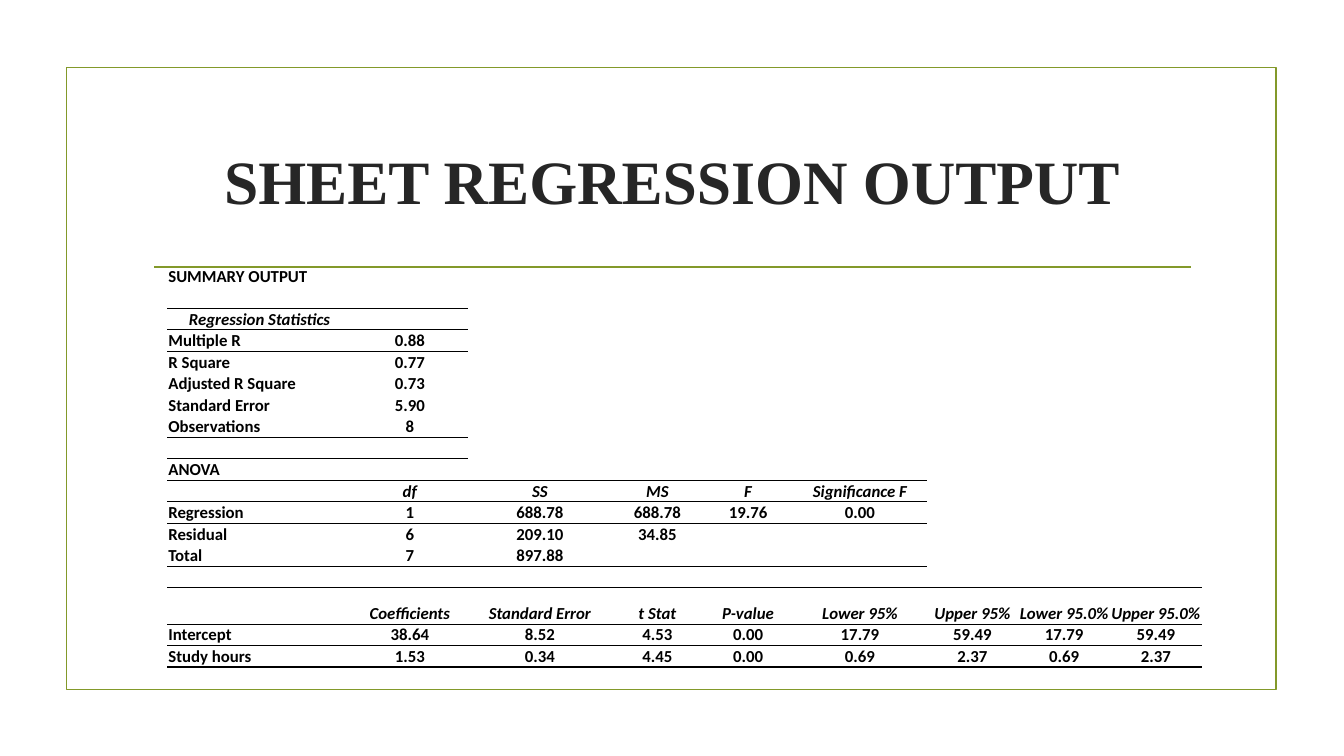
from dataclasses import dataclass

from lxml.etree import SubElement
from pptx import Presentation
from pptx.dml.color import RGBColor
from pptx.enum.shapes import MSO_CONNECTOR as Connector, MSO_SHAPE as Shape
from pptx.enum.text import MSO_ANCHOR as Anchor, PP_ALIGN as Align
from pptx.oxml.ns import qn
from pptx.slide import Slide
from pptx.table import Table, _Cell as Cell
from pptx.util import Inches, Pt

OLIVE, CHARCOAL, BLACK = "83992A", "262626", "000000"
NO_STYLE_NO_GRID = "{2D5ABB26-0587-4C30-8999-92F81FD0307C}"
COLUMN_WIDTHS = [1.83, 1.15, 1.43, 0.9, 0.9, 1.32, 0.91, 0.91, 0.91]
ROW_HEIGHT, COEFFICIENT_HEADER_HEIGHT = 0.2, 0.36


@dataclass
class Row:
    values: tuple[str, ...] = ()
    header: bool = False


@dataclass
class Rule:
    """Horizontal line under a row, across the first columns."""
    row: int
    columns: int
    points: float


ROWS = [
    Row(("SUMMARY OUTPUT",)),
    Row(),
    Row(("Regression Statistics",), header=True),
    Row(("Multiple R", "0.88")),
    Row(("R Square", "0.77")),
    Row(("Adjusted R Square", "0.73")),
    Row(("Standard Error", "5.90")),
    Row(("Observations", "8")),
    Row(),
    Row(("ANOVA",)),
    Row(("", "df", "SS", "MS", "F", "Significance F"), header=True),
    Row(("Regression", "1", "688.78", "688.78", "19.76", "0.00")),
    Row(("Residual", "6", "209.10", "34.85")),
    Row(("Total", "7", "897.88")),
    Row(),
    Row(("", "Coefficients", "Standard Error", "t Stat", "P-value", "Lower 95%",
         "Upper 95%", "Lower 95.0%", "Upper 95.0%"), header=True),
    Row(("Intercept", "38.64", "8.52", "4.53", "0.00", "17.79", "59.49", "17.79", "59.49")),
    Row(("Study hours", "1.53", "0.34", "4.45", "0.00", "0.69", "2.37", "0.69", "2.37")),
]
COEFFICIENT_HEADER = 15
RULES = [
    Rule(1, 2, 1), Rule(2, 2, 0.5), Rule(7, 2, 1),
    Rule(9, 6, 1), Rule(10, 6, 0.5), Rule(13, 6, 1),
    Rule(14, 9, 1), Rule(COEFFICIENT_HEADER, 9, 0.5), Rule(17, 9, 1),
]


def color(value: str) -> RGBColor:
    return RGBColor.from_string(value)


def add_frame(page: Slide) -> None:
    frame = page.shapes.add_shape(
        Shape.RECTANGLE, Inches(0.66), Inches(0.67), Inches(12), Inches(6.17))
    frame.shadow.inherit = False
    frame.fill.background()
    divider = page.shapes.add_connector(
        Connector.STRAIGHT, Inches(1.53), Inches(2.65), Inches(11.81), Inches(2.65))
    SubElement(divider._element.spPr, qn("a:effectLst"))
    for outline in (frame.line, divider.line):
        outline.color.rgb = color(OLIVE)
        outline.width = Pt(1.25)


def add_title(page: Slide, text: str) -> None:
    title = page.shapes.title
    title.left, title.top = Inches(1.42), Inches(1.07)
    title.width, title.height = Inches(10.5), Inches(1.43)
    title.text_frame.text = text
    title.text_frame.vertical_anchor = Anchor.MIDDLE
    para = title.text_frame.paragraphs[0]
    para.alignment = Align.CENTER
    para.font.name, para.font.size, para.font.bold = "Times New Roman", Pt(44), True
    para.font.color.rgb = color(CHARCOAL)


def add_border(cell: Cell, side: str, points: float) -> None:
    border = SubElement(cell._tc.get_or_add_tcPr(), qn(f"a:{side}"), w=str(Pt(points)))
    fill = SubElement(border, qn("a:solidFill"))
    SubElement(fill, qn("a:srgbClr"), val=BLACK)


def add_rules(table: Table) -> None:
    for rule in RULES:
        for column in range(rule.columns):
            add_border(table.cell(rule.row, column), "lnB", rule.points)
            if rule.row + 1 < len(ROWS):
                add_border(table.cell(rule.row + 1, column), "lnT", rule.points)


def fill_cell(cell: Cell, text: str, centred: bool, italic: bool) -> None:
    cell.fill.background()
    cell.margin_left = cell.margin_right = cell.margin_top = Inches(0.01)
    cell.margin_bottom = 0
    cell.vertical_anchor = Anchor.BOTTOM
    cell.text = text
    para = cell.text_frame.paragraphs[0]
    para.alignment = Align.CENTER if centred else Align.LEFT
    para.font.name, para.font.size = "Calibri", Pt(12)
    para.font.bold, para.font.italic = True, italic
    para.font.color.rgb = color(BLACK)


def add_regression_table(page: Slide) -> None:
    heights = [ROW_HEIGHT] * len(ROWS)
    heights[COEFFICIENT_HEADER] = COEFFICIENT_HEADER_HEIGHT
    table = page.shapes.add_table(
        len(ROWS), len(COLUMN_WIDTHS), Inches(1.66), Inches(2.63),
        Inches(sum(COLUMN_WIDTHS)), Inches(sum(heights))).table
    table.first_row = table.horz_banding = False
    table._tbl.tblPr.find(qn("a:tableStyleId")).text = NO_STYLE_NO_GRID
    for column, width in zip(table.columns, COLUMN_WIDTHS):
        column.width = Inches(width)
    for line, height in zip(table.rows, heights):
        line.height = Inches(height)
    add_rules(table)
    for index, row in enumerate(ROWS):
        for column in range(len(COLUMN_WIDTHS)):
            text = row.values[column] if column < len(row.values) else ""
            fill_cell(table.cell(index, column), text, column > 0 or row.header, row.header)


def main() -> None:
    deck = Presentation()
    deck.slide_width, deck.slide_height = Inches(13.33), Inches(7.5)
    page = deck.slides.add_slide(deck.slide_layouts.get_by_name("Title Only"))
    add_frame(page)
    add_title(page, "SHEET REGRESSION OUTPUT")
    add_regression_table(page)
    deck.save("out.pptx")


if __name__ == "__main__":
    main()
